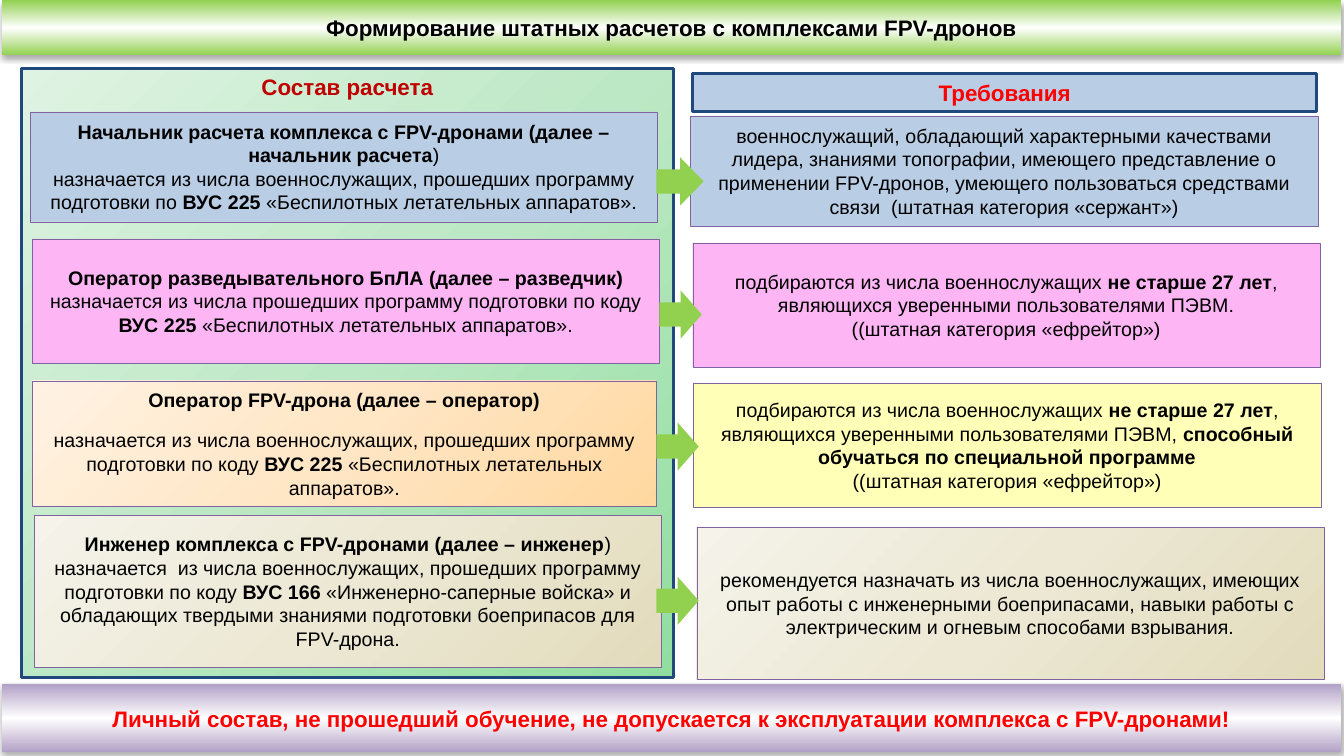
from pptx import Presentation
from pptx.dml.color import RGBColor
from pptx.enum.shapes import MSO_SHAPE
from pptx.enum.text import MSO_ANCHOR, PP_ALIGN
from pptx.oxml import parse_xml
from pptx.oxml.ns import nsdecls, qn
from pptx.util import Emu, Pt

RECT = MSO_SHAPE.RECTANGLE
ARROW = MSO_SHAPE.RIGHT_ARROW
TOP, MIDDLE = MSO_ANCHOR.TOP, MSO_ANCHOR.MIDDLE
CENTER = PP_ALIGN.CENTER

PX = 9144  # 100 px to the inch
FONT = "Arial"
COLORS = {
    "black": "000000", "red": "FF0000", "dark red": "C00000",
    "navy": "1F497D", "violet": "8064A2", "blue": "B9CDE5",
    "pink": "FDB5F4", "yellow": "FFFFB7", "arrow": "92D050",
}
# Gradient stops at 0, 50 and 100 percent, then the angle
GRADIENTS = {
    "mint": ("91DEA0", "BDE8C5", "DFF3E3", 225),
    "peach": ("FFD8A0", "FFE6C5", "FFF2E3", 225),
    "sand": ("E2DBBC", "ECE8D4", "F5F3EA", 225),
    "green band": ("92D050", "FFFFFF", "92D050", 90),
    "lilac band": ("B3A2C7", "FFFFFF", "B3A2C7", 90),
}

# Each row: fill, box, paragraphs of the role; the same for the requirement; arrow box.
# Bold words stand between ** marks.
ROWS = [
    ("blue", (30, 111, 622, 109),
     ["**Начальник расчета комплекса с FPV-дронами (далее – начальник расчета**)",
      "назначается из числа военнослужащих, прошедших программу подготовки по "
      "**ВУС 225** «Беспилотных летательных аппаратов»."],
     "blue", (685, 115, 622, 109),
     ["военнослужащий, обладающий характерными качествами лидера, знаниями топографии, "
      "имеющего представление о применении FPV-дронов, умеющего пользоваться средствами "
      "связи  (штатная категория «сержант»)"],
     (651, 156, 47, 48)),
    ("pink", (32, 237, 622, 123),
     ["**Оператор разведывательного БпЛА (далее – разведчик)**",
      "назначается из числа прошедших программу подготовки по коду "
      "**ВУС 225** «Беспилотных летательных аппаратов»."],
     "pink", (687, 241, 622, 123),
     ["подбираются из числа военнослужащих **не старше 27 лет**, "
      "являющихся уверенными пользователями ПЭВМ.",
      "((штатная категория «ефрейтор»)"],
     (654, 288, 42, 48)),
    ("peach", (32, 378, 619, 124),
     ["**Оператор FPV-дрона (далее – оператор)**",
      "назначается из числа военнослужащих, прошедших программу подготовки по коду "
      "**ВУС 225** «Беспилотных летательных аппаратов»."],
     "yellow", (688, 380, 622, 123),
     ["подбираются из числа военнослужащих **не старше 27 лет**, "
      "являющихся уверенными пользователями ПЭВМ, "
      "**способный обучаться по специальной программе**",
      "((штатная категория «ефрейтор»)"],
     (651, 419, 42, 48)),
    ("sand", (34, 511, 622, 151),
     ["**Инженер комплекса с FPV-дронами (далее – инженер**) назначается  из числа "
      "военнослужащих, прошедших программу подготовки по коду **ВУС 166** "
      "«Инженерно-саперные войска» и обладающих твердыми знаниями подготовки "
      "боеприпасов для FPV-дрона."],
     "sand", (691, 523, 622, 151),
     ["рекомендуется назначать из числа военнослужащих, имеющих опыт работы с инженерными "
      "боеприпасами, навыки работы с электрическим и огневым способами взрывания."],
     (651, 572, 42, 48)),
]
PARAGRAPH_GAPS = {"peach": 12}


def rgb(name):
    return RGBColor.from_string(COLORS[name])


def paint_gradient(shape, name):
    *stops, angle = GRADIENTS[name]
    gs = "".join(f'<a:gs pos="{i * 50000}"><a:srgbClr val="{stop}"/></a:gs>'
                 for i, stop in enumerate(stops))
    shape.fill.gradient()
    properties = shape.element.spPr
    properties.replace(properties.find(qn("a:gradFill")), parse_xml(
        f'<a:gradFill {nsdecls("a")} rotWithShape="1"><a:gsLst>{gs}</a:gsLst>'
        f'<a:lin ang="{angle * 60000}" scaled="0"/></a:gradFill>'))


def add_block(slide, box, fill, border=None, border_width=0.25, kind=RECT):
    shape = slide.shapes.add_shape(kind, *(Emu(length * PX) for length in box))
    shape.shadow.inherit = False
    if fill in GRADIENTS:
        paint_gradient(shape, fill)
    else:
        shape.fill.solid()
        shape.fill.fore_color.rgb = rgb(fill)
    if border:
        shape.line.color.rgb = rgb(border)
        shape.line.width = Pt(border_width)
    else:
        shape.line.fill.background()
    return shape


def write(shape, paragraphs, size=14, color="black", anchor=MIDDLE, gap=0):
    frame = shape.text_frame
    frame.word_wrap = True
    frame.vertical_anchor = anchor
    for i, text in enumerate(paragraphs):
        paragraph = frame.paragraphs[0] if i == 0 else frame.add_paragraph()
        paragraph.alignment = CENTER
        if i and gap:
            paragraph.space_before = Pt(gap)
        pieces = [(part, n % 2 == 1) for n, part in enumerate(text.split("**")) if part]
        font = paragraph.font
        font.name, font.size = FONT, Pt(size)
        font.color.rgb = rgb(color)
        uniform = len(pieces) == 1
        if uniform:
            font.bold = pieces[0][1]
        for part, bold in pieces:
            run = paragraph.add_run()
            run.text = part
            if not uniform:
                run.font.bold = bold


def add_banner(slide, box, fill, text, color):
    banner = add_block(slide, box, fill)
    banner.element.spPr.find(qn("a:effectLst")).append(parse_xml(
        f'<a:outerShdw {nsdecls("a")} blurRad="44450" dist="27940" dir="5400000" algn="ctr">'
        '<a:srgbClr val="000000"><a:alpha val="32000"/></a:srgbClr></a:outerShdw>'))
    write(banner, [f"**{text}**"], 16, color)


def add_headings(slide):
    crew = add_block(slide, (21, 68, 647, 604), "mint", "navy", 2)
    write(crew, ["**Состав расчета**"], 16, "dark red", TOP)
    demands = add_block(slide, (687, 73, 619, 38), "blue", "navy", 2)
    write(demands, ["**Требования**"], 16, "red")


def add_row(slide, role_fill, role_box, role, demand_fill, demand_box, demand, arrow_box):
    write(add_block(slide, role_box, role_fill, "violet"), role,
          gap=PARAGRAPH_GAPS.get(role_fill, 0))
    write(add_block(slide, demand_box, demand_fill, "violet"), demand)
    add_block(slide, arrow_box, "arrow", kind=ARROW)


def main():
    deck = Presentation()
    deck.slide_width, deck.slide_height = Emu(1333 * PX), Emu(750 * PX)
    slide = deck.slides.add_slide(deck.slide_layouts[6])

    # Crew panel and column headings
    add_headings(slide)
    # Crew members with their requirements
    for row in ROWS:
        add_row(slide, *row)
    # Title and warning
    add_banner(slide, (2, 0, 1328, 55), "green band",
               "Формирование штатных расчетов с комплексами FPV-дронов", "black")
    add_banner(slide, (2, 679, 1328, 67), "lilac band",
               "Личный состав, не прошедший обучение, не допускается "
               "к эксплуатации комплекса с FPV-дронами!", "red")
    deck.save("out.pptx")


if __name__ == "__main__":
    main()
